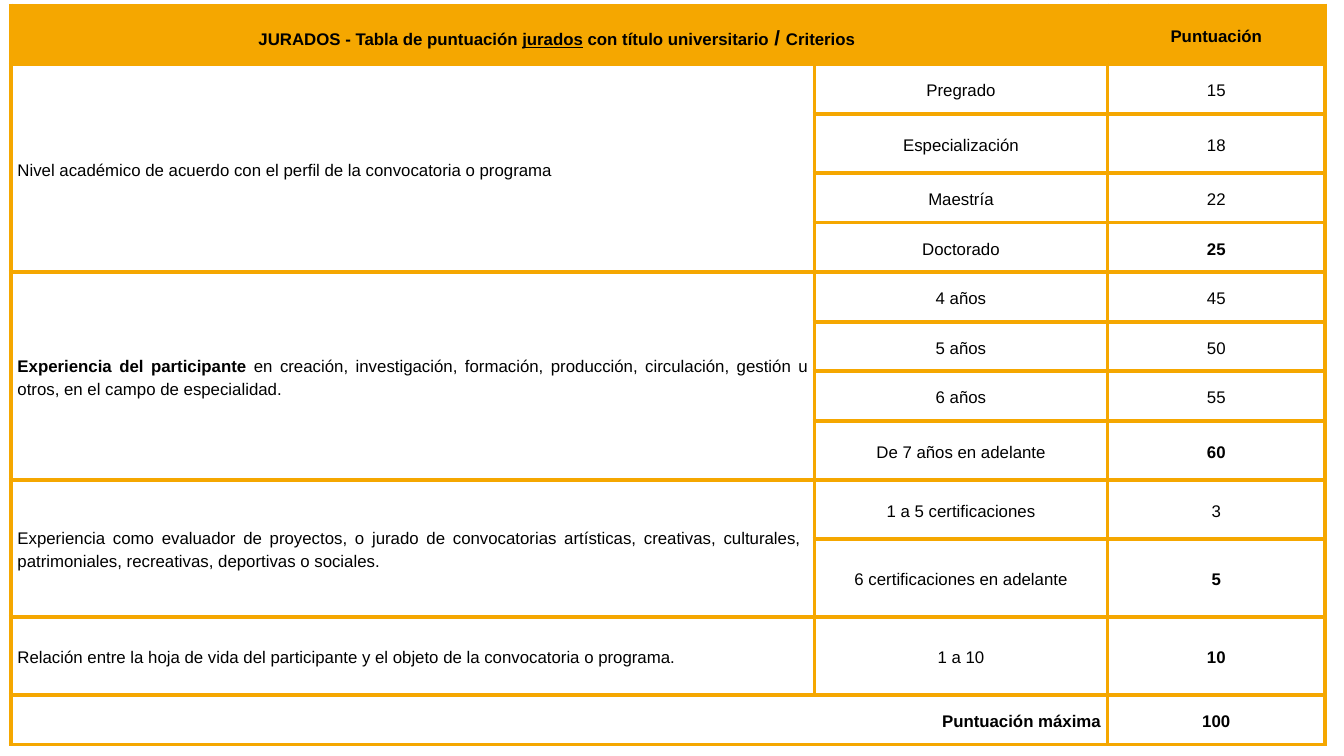
from dataclasses import dataclass

import pptx
import pptx.dml.color
import pptx.enum.text
import pptx.oxml
import pptx.oxml.ns
import pptx.slide
import pptx.table
import pptx.util

Inches = pptx.util.Inches
Align = pptx.enum.text.PP_ALIGN

COLORS = {"amber": "F5A700", "ink": "000000"}
FONT = "Arial"
WIDTH = 10
HEIGHT = WIDTH * 9 / 16
LEFT, TOP = 0.08, 0.04
COLUMNS = (5.98, 2.18, 1.62)
HEADER, SHORT, MEDIUM, TALL = 0.44, 0.29, 0.44, 0.58
BORDER = pptx.util.Pt(2.25)


@dataclass(frozen=True)
class Span:
    text: str
    bold: bool = False
    underline: bool = False
    size: float = 9


@dataclass(frozen=True)
class Level:
    name: str
    points: str
    height: float = SHORT
    top_score: bool = False


@dataclass(frozen=True)
class Criterion:
    spans: tuple[Span, ...]
    levels: tuple[Level, ...]


TITLE = (
    Span("JURADOS - Tabla de puntuación ", bold=True),
    Span("jurados", bold=True, underline=True),
    Span(" con título universitario", bold=True),
    Span(" / ", bold=True, size=11),
    Span("Criterios ", bold=True),
)

CRITERIA = (
    Criterion(
        (Span("Nivel académico de acuerdo con el perfil de la convocatoria o programa"),),
        (
            Level("Pregrado", "15"),
            Level("Especialización", "18", MEDIUM),
            Level("Maestría", "22"),
            Level("Doctorado", "25", top_score=True),
        ),
    ),
    Criterion(
        (
            Span("Experiencia del participante ", bold=True),
            Span("en creación, investigación, formación, producción, circulación, "
                 "gestión u otros, en el campo de especialidad. "),
        ),
        (
            Level("4 años", "45"),
            Level("5 años", "50"),
            Level("6 años", "55"),
            Level("De 7 años en adelante", "60", MEDIUM, top_score=True),
        ),
    ),
    Criterion(
        (Span("Experiencia como evaluador de proyectos, o jurado de convocatorias artísticas, "
              "creativas, culturales,  patrimoniales, recreativas, deportivas o sociales."),),
        (
            Level("1 a 5 certificaciones", "3", MEDIUM),
            Level("6 certificaciones en adelante", "5", TALL, top_score=True),
        ),
    ),
    Criterion(
        (Span("Relación entre la hoja de vida del participante y el objeto de la "
              "convocatoria o programa."),),
        (Level("1 a 10", "10", TALL, top_score=True),),
    ),
)


def rgb(name: str) -> pptx.dml.color.RGBColor:
    return pptx.dml.color.RGBColor.from_string(COLORS[name])


def add_borders(cell: pptx.table._Cell) -> None:
    properties = cell._tc.get_or_add_tcPr()
    for index, side in enumerate(("lnL", "lnR", "lnT", "lnB")):
        line = pptx.oxml.parse_xml(
            f'<a:{side} {pptx.oxml.ns.nsdecls("a")} w="{BORDER}">'
            f'<a:solidFill><a:srgbClr val="{COLORS["amber"]}"/></a:solidFill></a:{side}>'
        )
        properties.insert(index, line)


def style_cell(cell: pptx.table._Cell, header: bool) -> None:
    if header:
        cell.fill.solid()
        cell.fill.fore_color.rgb = rgb("amber")
    else:
        cell.fill.background()
    cell.margin_left = cell.margin_right = Inches(0.05)
    cell.margin_top = cell.margin_bottom = Inches(0.1)
    cell.vertical_anchor = pptx.enum.text.MSO_ANCHOR.MIDDLE
    add_borders(cell)


def write(cell: pptx.table._Cell, *spans: Span, align: Align = Align.CENTER,
          spacing: float = 1.2) -> None:
    para = cell.text_frame.paragraphs[0]
    para.alignment = align
    para.line_spacing = spacing
    for span in spans:
        run = para.add_run()
        run.text = span.text
        run.font.name = FONT
        run.font.size = pptx.util.Pt(span.size)
        run.font.bold = span.bold
        run.font.underline = span.underline
        run.font.color.rgb = rgb("ink")


def add_score_table(page: pptx.slide.Slide) -> pptx.table.Table:
    heights = [HEADER, *(level.height for item in CRITERIA for level in item.levels), SHORT]
    table = page.shapes.add_table(
        len(heights), len(COLUMNS), Inches(LEFT), Inches(TOP),
        Inches(sum(COLUMNS)), Inches(sum(heights)),
    ).table
    table.first_row = table.horz_banding = False
    for column, width in zip(table.columns, COLUMNS):
        column.width = Inches(width)
    for index, (row, height) in enumerate(zip(table.rows, heights)):
        row.height = Inches(height)
        for cell in row.cells:
            style_cell(cell, header=index == 0)
    return table


def fill_score_table(table: pptx.table.Table) -> None:
    last = len(table.rows) - 1
    for row in (0, last):
        table.cell(row, 0).merge(table.cell(row, 1))
    write(table.cell(0, 0), *TITLE, spacing=1.29)
    write(table.cell(0, 2), Span("Puntuación", bold=True))

    row = 1
    for criterion in CRITERIA:
        first = table.cell(row, 0)
        if len(criterion.levels) > 1:
            first.merge(table.cell(row + len(criterion.levels) - 1, 0))
        write(first, *criterion.spans, align=Align.JUSTIFY)
        for level in criterion.levels:
            write(table.cell(row, 1), Span(level.name))
            write(table.cell(row, 2), Span(level.points, bold=level.top_score))
            row += 1

    write(table.cell(last, 0), Span("Puntuación máxima", bold=True), align=Align.RIGHT)
    write(table.cell(last, 2), Span("100", bold=True))


def main() -> None:
    deck = pptx.Presentation()
    deck.slide_width, deck.slide_height = Inches(WIDTH), Inches(HEIGHT)
    page = deck.slides.add_slide(deck.slide_layouts[6])
    fill_score_table(add_score_table(page))
    deck.save("out.pptx")


if __name__ == "__main__":
    main()
